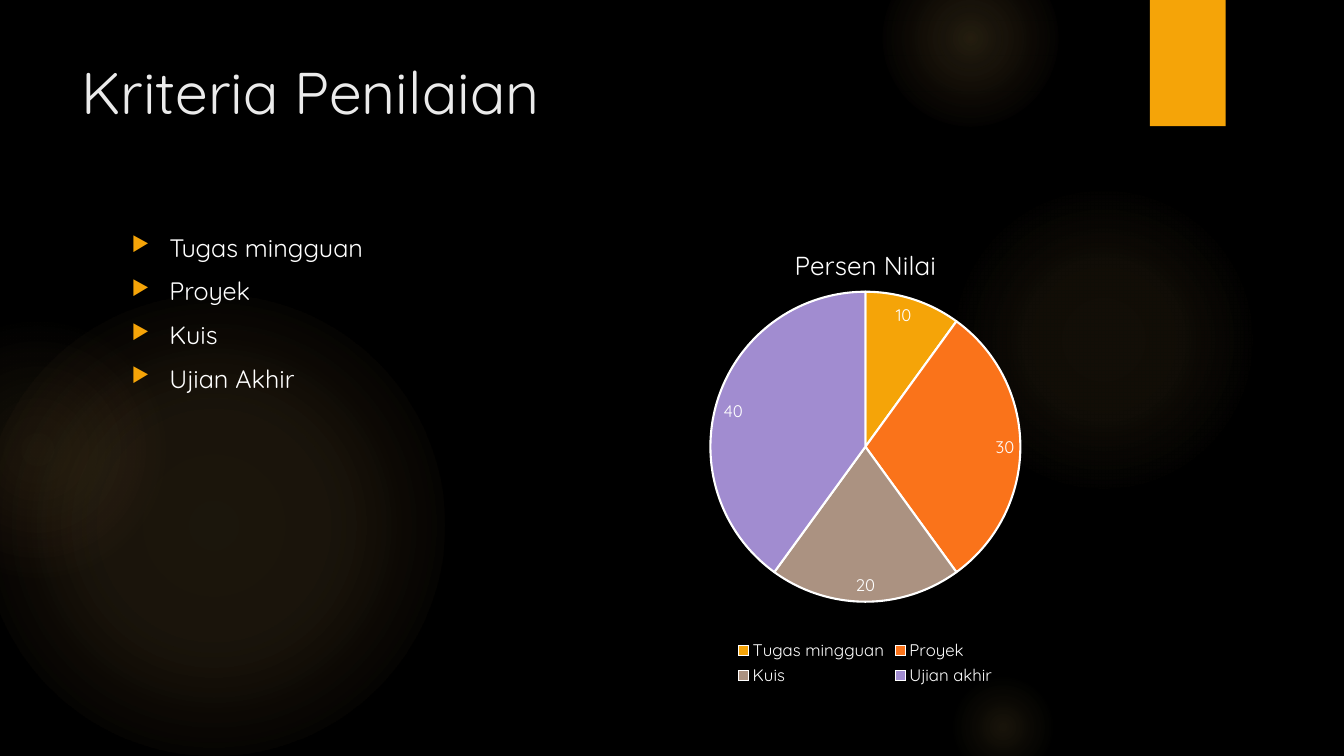
from dataclasses import dataclass

from lxml import etree
from pptx import Presentation
from pptx.chart.data import CategoryChartData
from pptx.dml.color import RGBColor
from pptx.enum.chart import XL_CHART_TYPE, XL_LABEL_POSITION, XL_LEGEND_POSITION
from pptx.enum.shapes import MSO_SHAPE
from pptx.enum.text import MSO_ANCHOR
from pptx.oxml import parse_xml
from pptx.oxml.ns import nsdecls, qn
from pptx.slide import Slide
from pptx.text.text import Font
from pptx.util import Cm, Pt

PIE = XL_CHART_TYPE.PIE
INSIDE_END = XL_LABEL_POSITION.INSIDE_END
LEGEND_BOTTOM = XL_LEGEND_POSITION.BOTTOM
OVAL = MSO_SHAPE.OVAL
RECTANGLE = MSO_SHAPE.RECTANGLE
TOP = MSO_ANCHOR.TOP

FONT_NAME = "Quicksand"
BLACK = RGBColor(0x00, 0x00, 0x00)
WHITE = RGBColor(0xFF, 0xFF, 0xFF)
TITLE_GREY = RGBColor(0xEB, 0xEB, 0xEB)
AMBER = RGBColor(0xF5, 0xA4, 0x08)
ORANGE = RGBColor(0xFA, 0x73, 0x1A)
TAUPE = RGBColor(0xAB, 0x92, 0x81)
LAVENDER = RGBColor(0xA1, 0x8C, 0xD0)
GLOW = RGBColor(0xFA, 0xC9, 0x6A)
GLOW_EDGE = RGBColor(0xF5, 0x9B, 0x74)


@dataclass(frozen=True)
class Area:
    left: float
    top: float
    width: float
    height: float

    def lengths(self) -> tuple[Cm, Cm, Cm, Cm]:
        return Cm(self.left), Cm(self.top), Cm(self.width), Cm(self.height)


@dataclass(frozen=True)
class Halo:
    left: float
    top: float
    diameter: float
    center_alpha: int
    middle_alpha: int
    middle: int
    end: int
    edge: RGBColor = GLOW


@dataclass(frozen=True)
class Slice:
    name: str
    value: int
    color: RGBColor


HALOS = [
    Halo(-0.43, 7.42, 11.63, 11, 10, 36, 75),
    Halo(-2.34, 8.05, 6.55, 8, 5, 36, 71, GLOW_EDGE),
    Halo(23.9, 4.65, 7.82, 7, 6, 36, 69),
    Halo(22.23, -1.27, 4.45, 14, 7, 36, 73),
    Halo(23.9, 16.94, 2.74, 10, 5, 31, 66),
]
RIBBON_AREA = Area(28.98, 0, 1.91, 3.18)
TITLE_AREA = Area(1.8, 1.27, 26.14, 3.89)
LIST_AREA = Area(3.07, 5.72, 12.22, 11.66)
CHART_AREA = Area(15.7, 5.72, 12.22, 11.66)
CRITERIA = ["Tugas mingguan", "Proyek", "Kuis", "Ujian Akhir"]
SLICES = [
    Slice("Tugas mingguan", 10, AMBER),
    Slice("Proyek", 30, ORANGE),
    Slice("Kuis", 20, TAUPE),
    Slice("Ujian akhir", 40, LAVENDER),
]
PLOT_LAYOUT = {"x": 0.18, "y": 0.14, "w": 0.64, "h": 0.67}


def style_font(font: Font, size: float, color: RGBColor) -> None:
    font.name = FONT_NAME
    font.size = Pt(size)
    font.bold = False
    font.color.rgb = color


def draw_halo(page: Slide, halo: Halo) -> None:
    area = Area(halo.left, halo.top, halo.diameter, halo.diameter)
    oval = page.shapes.add_shape(OVAL, *area.lengths())
    oval.shadow.inherit = False
    oval.line.fill.background()
    stops = [
        (0, GLOW, halo.center_alpha),
        (halo.middle, GLOW, halo.middle_alpha),
        (halo.end, halo.edge, 0),
    ]
    stop_xml = "".join(
        f'<a:gs pos="{position * 1000}"><a:srgbClr val="{color}">'
        f'<a:alpha val="{alpha * 1000}"/></a:srgbClr></a:gs>'
        for position, color, alpha in stops
    )
    gradient = parse_xml(
        f'<a:gradFill {nsdecls("a")} rotWithShape="1"><a:gsLst>{stop_xml}</a:gsLst>'
        '<a:path path="circle"><a:fillToRect l="50000" t="50000" r="50000" b="50000"/>'
        "</a:path></a:gradFill>"
    )
    oval.element.spPr.find(qn("a:prstGeom")).addnext(gradient)


def draw_ribbon(page: Slide) -> None:
    ribbon = page.shapes.add_shape(RECTANGLE, *RIBBON_AREA.lengths())
    ribbon.shadow.inherit = False
    ribbon.fill.solid()
    ribbon.fill.fore_color.rgb = AMBER
    ribbon.line.fill.background()


def draw_text(
    page: Slide, area: Area, lines: list[str], size: float, color: RGBColor, bulleted: bool = False
) -> None:
    frame = page.shapes.add_textbox(*area.lengths()).text_frame
    frame.word_wrap = True
    frame.vertical_anchor = TOP
    for index, line in enumerate(lines):
        para = frame.add_paragraph() if index else frame.paragraphs[0]
        span = para.add_run()
        span.text = line
        style_font(span.font, size, color)
        if bulleted:
            para.space_after = Pt(6)
            add_bullet(para._p.get_or_add_pPr())


def add_bullet(properties: etree._Element) -> None:
    indent = Cm(0.95)
    properties.set("marL", str(indent))
    properties.set("indent", str(-indent))
    space_before = etree.Element(qn("a:spcBef"))
    etree.SubElement(space_before, qn("a:spcPct"), val="20000")
    properties.insert(0, space_before)
    bullet_color = etree.SubElement(properties, qn("a:buClr"))
    etree.SubElement(bullet_color, qn("a:srgbClr"), val=str(AMBER))
    etree.SubElement(properties, qn("a:buSzPct"), val="80000")
    etree.SubElement(properties, qn("a:buChar"), char="▶")


def draw_chart(page: Slide) -> None:
    data = CategoryChartData()
    data.categories = [part.name for part in SLICES]
    data.add_series("Persen Nilai", [part.value for part in SLICES])
    chart = page.shapes.add_chart(PIE, *CHART_AREA.lengths(), data).chart
    style_font(chart.font, 10, WHITE)

    chart.has_title = True
    span = chart.chart_title.text_frame.paragraphs[0].add_run()
    span.text = "Persen Nilai"
    style_font(span.font, 18.6, WHITE)

    chart.has_legend = True
    chart.legend.position = LEGEND_BOTTOM
    chart.legend.include_in_layout = False
    style_font(chart.legend.font, 12, WHITE)

    plot = chart.plots[0]
    plot.vary_by_categories = True
    series = plot.series[0]
    for index, part in enumerate(SLICES):
        style = series.points[index].format
        style.fill.solid()
        style.fill.fore_color.rgb = part.color
        style.line.color.rgb = WHITE
        style.line.width = Pt(1.5)

    labels = series.data_labels
    labels.show_value = True
    labels.position = INSIDE_END
    style_font(labels.font, 12, WHITE)

    plot_area = chart.element.find(".//" + qn("c:plotArea"))
    for previous in plot_area.findall(qn("c:layout")):
        plot_area.remove(previous)
    layout = etree.Element(qn("c:layout"))
    manual = etree.SubElement(layout, qn("c:manualLayout"))
    etree.SubElement(manual, qn("c:layoutTarget"), val="inner")
    for axis in "xy":
        etree.SubElement(manual, qn(f"c:{axis}Mode"), val="edge")
    for side, share in PLOT_LAYOUT.items():
        etree.SubElement(manual, qn(f"c:{side}"), val=str(share))
    plot_area.insert(0, layout)


def main() -> None:
    deck = Presentation()
    deck.slide_width = Cm(33.87)
    deck.slide_height = Cm(19.05)
    page = deck.slides.add_slide(deck.slide_layouts[6])
    page.background.fill.solid()
    page.background.fill.fore_color.rgb = BLACK
    for halo in HALOS:
        draw_halo(page, halo)
    draw_ribbon(page)
    draw_text(page, TITLE_AREA, ["Kriteria Penilaian"], 42, TITLE_GREY)
    draw_text(page, LIST_AREA, CRITERIA, 18, WHITE, bulleted=True)
    draw_chart(page)
    deck.save("out.pptx")


if __name__ == "__main__":
    main()
